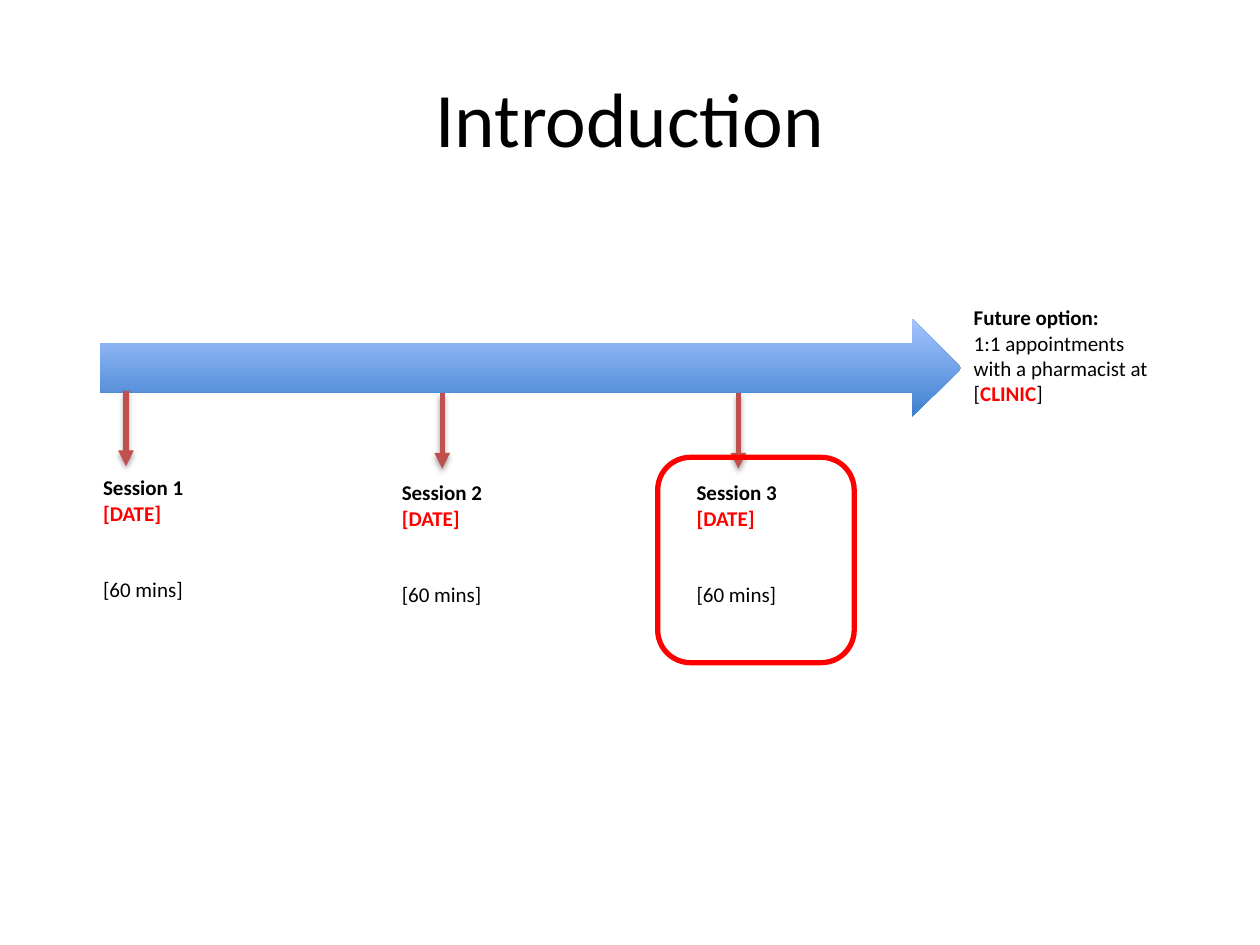
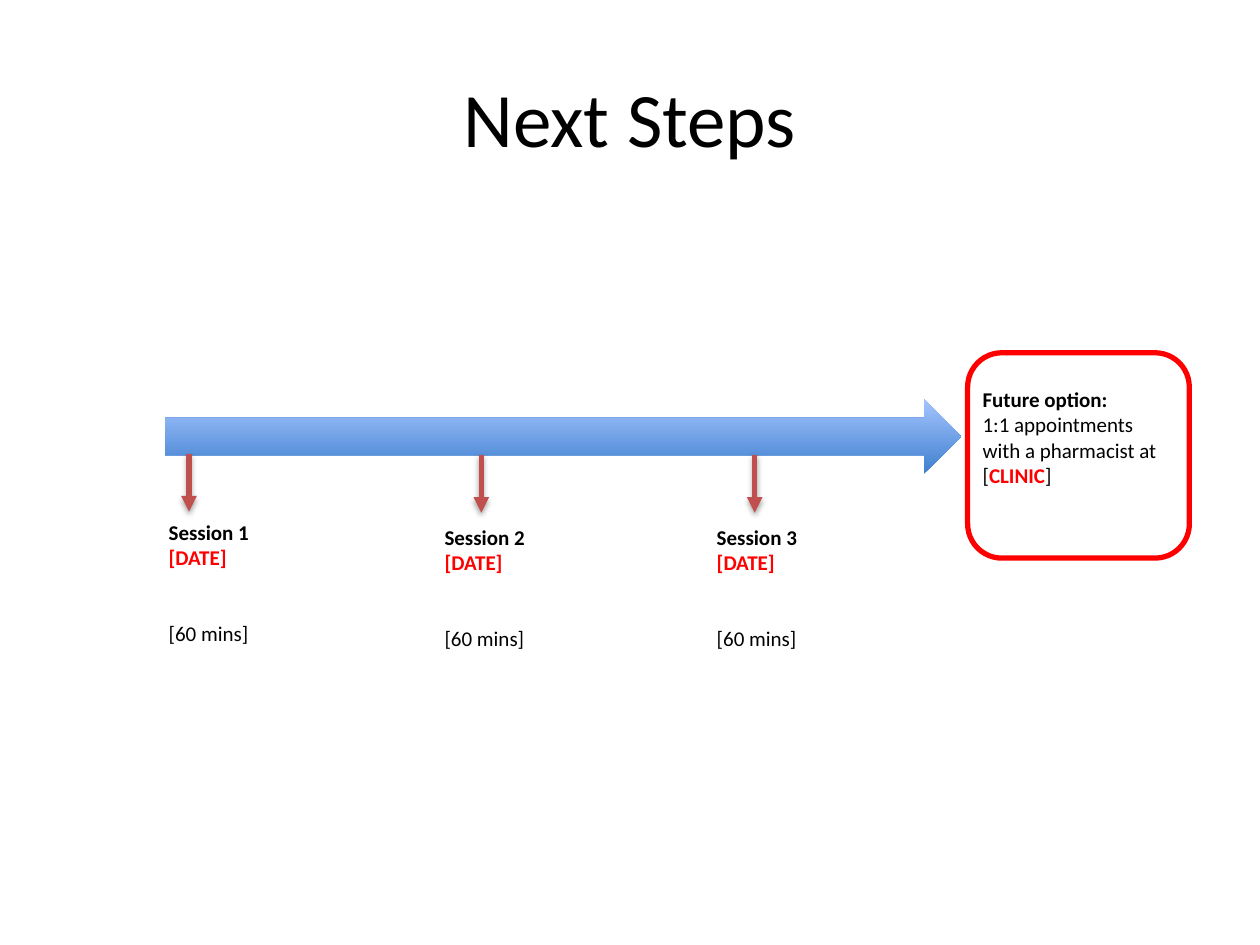
from lxml import etree
from pptx import Presentation
from pptx.dml.color import RGBColor
from pptx.enum.shapes import MSO_CONNECTOR as Connector, MSO_SHAPE as Shape
from pptx.enum.text import MSO_ANCHOR as Anchor, PP_ALIGN as Align
from pptx.oxml import parse_xml
from pptx.oxml.ns import nsdecls, qn
from pptx.util import Inches, Pt

BLACK = RGBColor(0x00, 0x00, 0x00)
RED = RGBColor(0xFF, 0x00, 0x00)
BRICK = RGBColor(0xC0, 0x50, 0x4D)
BLUE_DARK = RGBColor(0x3F, 0x80, 0xCE)
BLUE_LIGHT = RGBColor(0xA4, 0xC4, 0xFF)
FONT = "Calibri"
TWO_LINES = 29.3
LABEL_HEIGHT = 1.11
ARROW_SHADOW = (
    f'<a:effectLst {nsdecls("a")}><a:outerShdw blurRad="{Pt(3.1)}" dist="{Pt(1.8)}" '
    'dir="5400000" rotWithShape="0"><a:srgbClr val="000000"><a:alpha val="35000"/>'
    "</a:srgbClr></a:outerShdw></a:effectLst>"
)


def add_run(paragraph, text, size=12, bold=False, color=BLACK):
    """Add formatted text to a paragraph."""
    run = paragraph.add_run()
    run.text = text
    run.font.name = FONT
    run.font.size = Pt(size)
    run.font.bold = bold
    run.font.color.rgb = color


def add_text(slide, box, lines, align=Align.LEFT, anchor=Anchor.TOP, last_gap=0, **font):
    """Add a text box; each line is a list of (text, format) runs."""
    frame = slide.shapes.add_textbox(*map(Inches, box)).text_frame
    frame.word_wrap = True
    frame.vertical_anchor = anchor
    for index, runs in enumerate(lines):
        paragraph = frame.add_paragraph() if index else frame.paragraphs[0]
        paragraph.alignment = align
        for text, run_format in runs:
            add_run(paragraph, text, **{**font, **run_format})
    paragraph.space_before = Pt(last_gap)


def add_title(slide, text):
    """Add the centred slide title."""
    add_text(slide, (0.5, 0.3, 9, 1.25), [[(text, {})]],
             align=Align.CENTER, anchor=Anchor.MIDDLE, size=44)


def add_timeline(slide, box):
    """Add the wide gradient arrow."""
    arrow = slide.shapes.add_shape(Shape.RIGHT_ARROW, *map(Inches, box))
    arrow.shadow.inherit = False
    arrow.line.fill.background()
    arrow.fill.gradient()
    arrow.fill.gradient_angle = 90
    for stop, color, position in zip(arrow.fill.gradient_stops, (BLUE_DARK, BLUE_LIGHT), (0, 1)):
        stop.color.rgb = color
        stop.position = position


def add_down_arrow(slide, x, top, length):
    """Add a shadowed arrow that points down to a session."""
    arrow = slide.shapes.add_connector(
        Connector.STRAIGHT, Inches(x), Inches(top), Inches(x), Inches(top + length))
    arrow.line.color.rgb = BRICK
    arrow.line.width = Pt(3)
    etree.SubElement(arrow.line._get_or_add_ln(), qn("a:tailEnd"), type="triangle")
    arrow._element.spPr.append(parse_xml(ARROW_SHADOW))


def add_session(slide, number, left, top, width):
    """Add the label of one session."""
    lines = [[(f"Session {number}", {"bold": True})],
             [("[DATE]", {"bold": True, "color": RED})],
             [("[60 mins]", {})]]
    add_text(slide, (left, top, width, LABEL_HEIGHT), lines, last_gap=TWO_LINES)


def add_future_option(slide, left, top):
    """Add the note at the tip of the timeline."""
    lines = [[("Future option:", {"bold": True})],
             [("1:1 appointments with a pharmacist at [", {}),
              ("CLINIC", {"bold": True, "color": RED}),
              ("]", {})]]
    add_text(slide, (left, top, 1.73, 0.91), lines)


def add_highlight(slide, box):
    """Add the red rounded outline around the current step."""
    outline = slide.shapes.add_shape(Shape.ROUNDED_RECTANGLE, *map(Inches, box))
    outline.shadow.inherit = False
    outline.fill.background()
    outline.line.color.rgb = RED
    outline.line.width = Pt(3)


def add_roadmap(presentation, title, timeline, arrow_length, sessions, option, highlight):
    """Add one slide; a session is (arrow x, arrow top, label left, top, width)."""
    slide = presentation.slides.add_slide(presentation.slide_layouts[6])
    add_title(slide, title)
    add_timeline(slide, timeline)
    for number, (arrow_x, arrow_top, *label) in enumerate(sessions, start=1):
        add_down_arrow(slide, arrow_x, arrow_top, arrow_length)
        add_session(slide, number, *label)
    add_future_option(slide, *option)
    add_highlight(slide, highlight)


def main():
    """Build both slides and save the file."""
    presentation = Presentation()
    presentation.slide_width = Inches(10)
    presentation.slide_height = Inches(7.5)
    add_roadmap(
        presentation, "Introduction",
        timeline=(0.79, 2.53, 6.84, 0.78),
        arrow_length=0.6,
        sessions=[(1, 3.1, 0.72, 3.72, 1.36),
                  (3.51, 3.12, 3.09, 3.76, 1.58),
                  (5.86, 3.12, 5.43, 3.76, 1.38)],
        option=(7.63, 2.37),
        highlight=(5.22, 3.63, 1.56, 1.63))
    add_roadmap(
        presentation, "Next Steps",
        timeline=(1.31, 3.17, 6.32, 0.59),
        arrow_length=0.46,
        sessions=[(1.5, 3.6, 1.24, 4.07, 1.26),
                  (3.82, 3.61, 3.43, 4.11, 1.46),
                  (5.99, 3.61, 5.59, 4.11, 1.27)],
        option=(7.7, 3.02),
        highlight=(7.68, 2.8, 1.76, 1.63))
    presentation.save("out.pptx")


if __name__ == "__main__":
    main()
